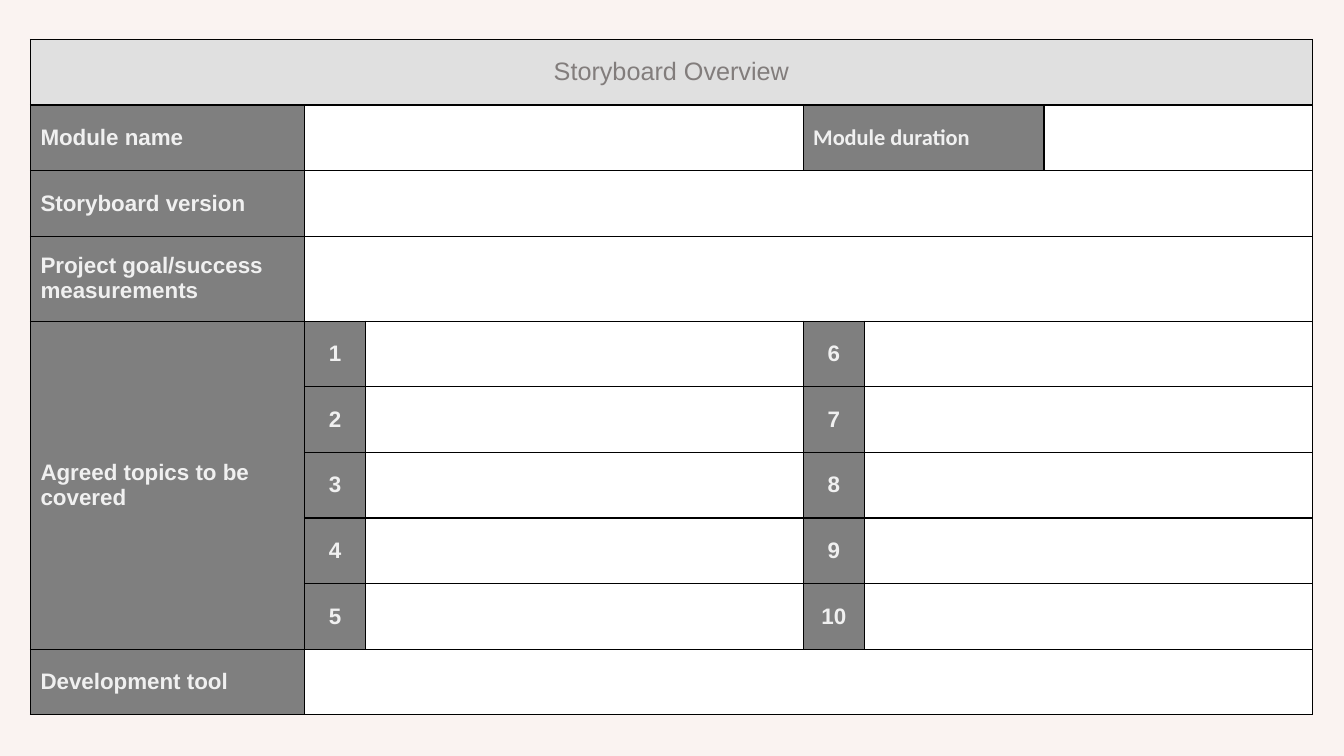
from pptx import Presentation
from pptx import util as u
from pptx.dml.color import RGBColor
from pptx.enum import text
from pptx.oxml.ns import qn
from lxml import etree

PX = 914400 // 192  # EMU per px on a 2560 x 1440 canvas
BACKGROUND, HEADER, LABEL, FIELD = "FAF3F1", "E0E0E0", "7F7F7F", "FFFFFF"
HEADER_TEXT, LABEL_TEXT, BORDER = "827D7C", "F0F0F0", "000000"
COLUMNS = [522, 117, 833, 117, 342, 511]
ROW, TALL_ROW = 125, 162
TOPIC_ROW, TOPICS_PER_COLUMN = 4, 5
ROW_LABELS = {
    1: "Module name",
    2: "Storyboard version",
    3: "Project goal/success measurements",
    TOPIC_ROW: "Agreed topics to be covered",
    9: "Development tool",
}


def px(n):
    return u.Emu(n * PX)


def rgb(hex_color):
    return RGBColor.from_string(hex_color)


def set_borders(cell):
    """Outline a cell; border lines must precede its fill."""
    tc_pr = cell._tc.get_or_add_tcPr()
    for i, side in enumerate(("lnL", "lnR", "lnT", "lnB")):
        line = etree.Element(qn("a:" + side), w=str(u.Pt(1)))
        fill = etree.SubElement(line, qn("a:solidFill"))
        etree.SubElement(fill, qn("a:srgbClr"), val=BORDER)
        tc_pr.insert(i, line)


def span(tbl, row, first, last, last_row=None):
    """Merge a block of cells and return its first cell."""
    cell = tbl.cell(row, first)
    cell.merge(tbl.cell(last_row or row, last))
    return cell


def fill_cell(cell, color):
    cell.fill.solid()
    cell.fill.fore_color.rgb = rgb(color)


def write(cell, words, color=LABEL_TEXT, fill=LABEL, size=16, bold=True,
          font="Arial", align=text.PP_ALIGN.LEFT):
    fill_cell(cell, fill)
    cell.vertical_anchor = text.MSO_ANCHOR.MIDDLE
    p = cell.text_frame.paragraphs[0]
    p.alignment = align
    r = p.add_run()
    r.text = words
    r.font.name, r.font.size, r.font.bold = font, u.Pt(size), bold
    r.font.color.rgb = rgb(color)


def add_grid(s):
    """Add the table with plain white, outlined cells."""
    heights = [TALL_ROW if i == 3 else ROW for i in range(10)]
    frame = s.shapes.add_table(len(heights), len(COLUMNS), px(58), px(75),
                               px(sum(COLUMNS)), px(sum(heights)))
    tbl = frame.table
    tbl.first_row = tbl.horz_banding = False
    for column, width in zip(tbl.columns, COLUMNS):
        column.width = px(width)
    for row, height in zip(tbl.rows, heights):
        row.height = px(height)
    for cell in tbl.iter_cells():
        fill_cell(cell, FIELD)
        set_borders(cell)
    return tbl


def add_topics(tbl):
    """Number the topics in two columns."""
    for i in range(TOPICS_PER_COLUMN):
        row = TOPIC_ROW + i
        for column, number in ((1, i + 1), (3, i + 1 + TOPICS_PER_COLUMN)):
            write(tbl.cell(row, column), str(number),
                  align=text.PP_ALIGN.CENTER)
        span(tbl, row, 4, 5)


def main():
    prs = Presentation()
    prs.slide_width, prs.slide_height = px(2560), px(1440)
    s = prs.slides.add_slide(prs.slide_layouts[6])
    s.background.fill.solid()
    s.background.fill.fore_color.rgb = rgb(BACKGROUND)
    tbl = add_grid(s)

    # Header row
    write(span(tbl, 0, 0, 5), "Storyboard Overview", HEADER_TEXT, HEADER,
          size=18, bold=False, align=text.PP_ALIGN.CENTER)

    # Row labels
    span(tbl, TOPIC_ROW, 0, 0, TOPIC_ROW + TOPICS_PER_COLUMN - 1)
    for row, label in ROW_LABELS.items():
        write(tbl.cell(row, 0), label)

    # Fields to fill in
    span(tbl, 1, 1, 2)
    write(span(tbl, 1, 3, 4), "Module duration", font="Calibri")
    for row in (2, 3, 9):
        span(tbl, row, 1, 5)
    add_topics(tbl)

    prs.save("out.pptx")


if __name__ == "__main__":
    main()
